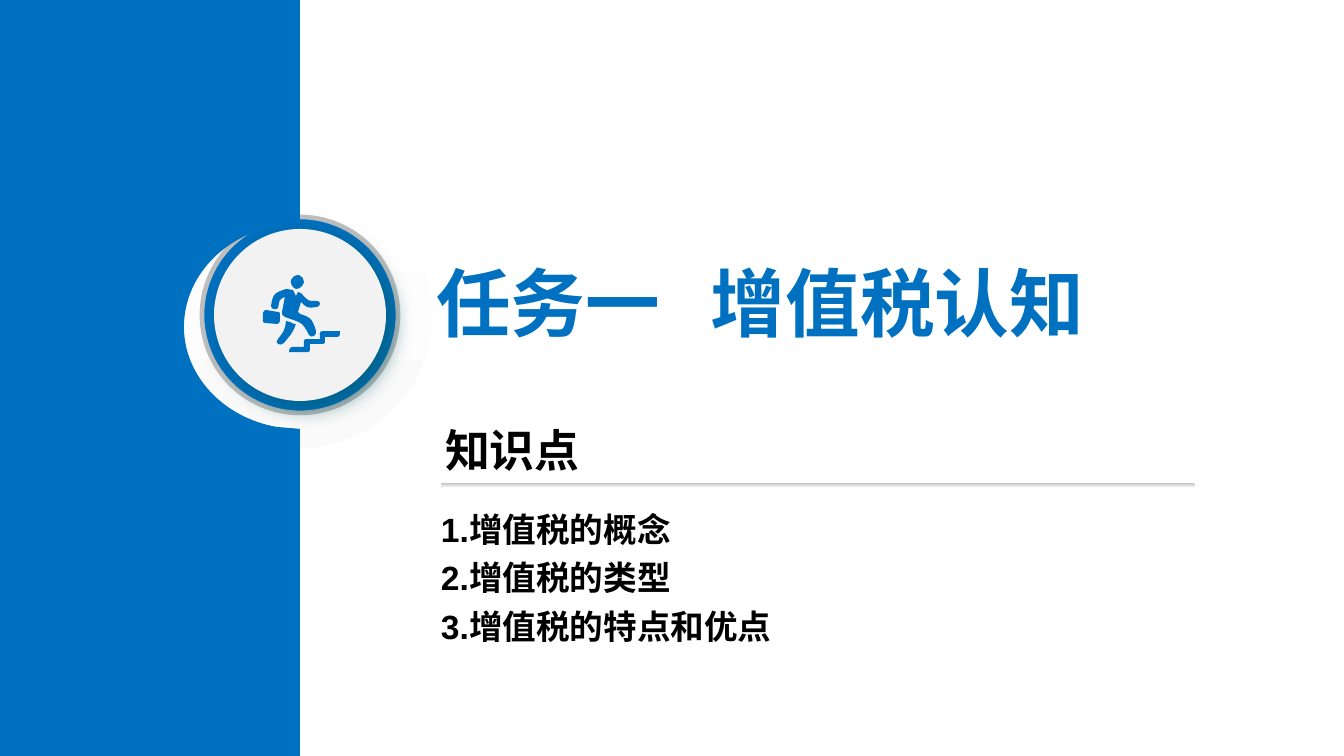
"""Build the section slide that introduces value-added tax."""
import pptx
import pptx.util
import pptx.dml.color
import pptx.enum.shapes
import pptx.enum.text
import pptx.oxml
import pptx.oxml.ns

SCALE = 914400 / 134.4
THEME = {
    "blue": "0070C0", "white": "FFFFFF", "mist": "FAFAFA", "pale": "F2F2F2",
    "grey": "BFBFBF", "black": "000000", "shadow": "005962", "font": "Arial",
    "title": 40, "heading": 24, "list": 18, "ring": 2.5,
}
COLOR = {
    name: pptx.dml.color.RGBColor.from_string(THEME[name])
    for name in ("blue", "white", "mist", "pale", "grey", "black")
}
SHAPE = pptx.enum.shapes.MSO_SHAPE
NAMESPACE = pptx.oxml.ns.nsdecls("a")


def emu(*lengths):
    return [round(length * SCALE) for length in lengths]


def add_outline(page, contours, color):
    builder = page.shapes.build_freeform(*emu(*contours[0][0]), scale=1.0)
    for index, (start, *segments) in enumerate(contours):
        if index:
            builder.move_to(*emu(*start))
        builder.add_line_segments([emu(*segment[-2:]) for segment in segments], close=True)
    shape = builder.convert_to_shape()
    segments = [segment for contour in contours for segment in contour[1:]]
    lines = list(shape.element.iter(pptx.oxml.ns.qn("a:lnTo")))
    for line, segment in zip(lines, segments):
        if len(segment) == 6:
            values = emu(*segment)
            points = "".join(
                f'<a:pt x="{x - shape.left}" y="{y - shape.top}"/>'
                for x, y in zip(values[::2], values[1::2])
            )
            curve = pptx.oxml.parse_xml(f"<a:cubicBezTo {NAMESPACE}>{points}</a:cubicBezTo>")
            line.getparent().replace(line, curve)
    shape.shadow.inherit = False
    shape.fill.solid()
    shape.fill.fore_color.rgb = color
    shape.line.fill.background()


deck = pptx.Presentation()
deck.slide_width, deck.slide_height = emu(1344, 756)
page = deck.slides.add_slide(deck.slide_layouts[1])

for kind, place, fills, outline in (
    (SHAPE.OVAL, (168, 184, 264, 264), ("white", "mist"), None),
    (SHAPE.OVAL, (202, 217, 196, 196), ("blue",), "grey"),
    (SHAPE.OVAL, (214, 229, 172, 172), ("pale",), None),
    (SHAPE.ROUNDED_RECTANGLE, (441, 483, 754, 5), ("grey", "white"), None),
):
    shape = page.shapes.add_shape(kind, *emu(*place))
    shape.shadow.inherit = False
    if len(fills) == 2:
        shape.fill.gradient()
        shape.fill.gradient_angle = 270
        for stop, fill in zip(shape.fill.gradient_stops, fills):
            stop.color.rgb = COLOR[fill]
    else:
        shape.fill.solid()
        shape.fill.fore_color.rgb = COLOR[fills[0]]
    if outline:
        shape.line.color.rgb = COLOR[outline]
        shape.line.width = pptx.util.Pt(THEME["ring"])
    else:
        shape.line.fill.background()
    if kind == SHAPE.ROUNDED_RECTANGLE:
        shape.adjustments[0] = 0.5
    if fills == ("pale",):
        effects = shape.element.spPr.find(pptx.oxml.ns.qn("a:effectLst"))
        effects.append(pptx.oxml.parse_xml(
            f'<a:outerShdw {NAMESPACE} blurRad="152400" dist="63500" dir="2700000" '
            f'algn="tl" rotWithShape="0"><a:srgbClr val="{THEME["shadow"]}">'
            f'<a:alpha val="64000"/></a:srgbClr></a:outerShdw>'
        ))

panel = [[
    (0, 0), (300, 0), (300, 223), (277, 226), (224, 235, 184, 277, 184, 327),
    (184, 376, 224, 418, 277, 427), (300, 429), (300, 756), (0, 756),
]]
stairs = [[
    (292, 347), (304, 347), (304, 341), (304, 340, 305, 339, 306, 339),
    (320, 339), (320, 333), (320, 332, 321, 331, 323, 331), (340, 331),
    (340, 334), (340, 336, 339, 337, 337, 337), (325, 337), (325, 342),
    (325, 343, 324, 344, 323, 344), (310, 344), (310, 350),
    (310, 351, 309, 352, 308, 352), (289, 352), (289, 349, 290, 347, 292, 347),
]]
briefcase = [
    (265, 323), (277, 324), (278, 324, 280, 323, 280, 321), (280, 314),
    (280, 313, 280, 312, 278, 312), (266, 310), (265, 310, 263, 311, 263, 313),
    (263, 320), (262, 321, 263, 323, 265, 323),
]
rear_leg = [
    (278, 339), (284, 331, 285, 331, 286, 321), (289, 321, 292, 323, 294, 324),
    (296, 324), (292, 335, 290, 335, 284, 343), (280, 347, 274, 343, 278, 339),
]
head = [
    (299, 275), (302, 276, 304, 279, 304, 282), (303, 286, 300, 289, 296, 289),
    (293, 288, 290, 284, 291, 280), (292, 277, 295, 275, 299, 275),
]
body = [
    (298, 292), (298, 292, 300, 293, 301, 293), (309, 302, 308, 301, 317, 301),
    (321, 301, 321, 306, 317, 307), (308, 308, 308, 309, 301, 302), (298, 312),
    (300, 314), (309, 317, 312, 317, 316, 331), (317, 335, 312, 339, 309, 335),
    (302, 321, 301, 323, 285, 317), (282, 316, 282, 314, 282, 312), (285, 297),
    (278, 300, 280, 300, 278, 308), (277, 310, 271, 310, 271, 306),
    (273, 294, 274, 293, 286, 289), (288, 289, 292, 290, 293, 290), (296, 296),
]
for contours in (panel, stairs, [briefcase, rear_leg, head, body]):
    add_outline(page, contours, COLOR["blue"])

title, topics = page.placeholders
heading = page.shapes.add_textbox(*emu(432, 416, 366, 67))
tight = emu(10, 5)
roomy = emu(13, 7)
for box, place, inset, lines, size, color, spacing in (
    (title, (426, 252, 750, 101), tight, ["任务一\t增值税认知"], "title", "blue", 1.0),
    (heading, (432, 416, 366, 67), roomy, ["知识点"], "heading", "black", 1.0),
    (topics, (431, 496, 765, 153), tight,
     ["1.增值税的概念", "2.增值税的类型", "3.增值税的特点和优点"], "list", "black", 1.2),
):
    box.left, box.top, box.width, box.height = emu(*place)
    frame = box.text_frame
    frame_format = {
        "margin_left": inset[0], "margin_right": inset[0],
        "margin_top": inset[1], "margin_bottom": inset[1],
        "word_wrap": True, "auto_size": pptx.enum.text.MSO_AUTO_SIZE.NONE,
        "vertical_anchor": pptx.enum.text.MSO_ANCHOR.TOP,
    }
    for key, value in frame_format.items():
        setattr(frame, key, value)
    for index, line in enumerate(lines):
        para = frame.paragraphs[0] if index == 0 else frame.add_paragraph()
        properties = para._p.get_or_add_pPr()
        if box is title:
            properties.append(pptx.oxml.parse_xml(
                f'<a:tabLst {NAMESPACE}><a:tab pos="{emu(275)[0]}" algn="l"/></a:tabLst>'
            ))
        if box is topics:
            properties.set("marL", "0")
            properties.set("indent", "0")
            properties.append(pptx.oxml.parse_xml(f"<a:buNone {NAMESPACE}/>"))
        para.alignment = pptx.enum.text.PP_ALIGN.LEFT
        para.line_spacing = spacing
        para.space_before = pptx.util.Pt(0)
        span = para.add_run()
        span.text = line
        font_format = {"name": THEME["font"], "size": pptx.util.Pt(THEME[size]), "bold": True}
        for key, value in font_format.items():
            setattr(span.font, key, value)
        span.font.color.rgb = COLOR[color]

deck.save("out.pptx")
